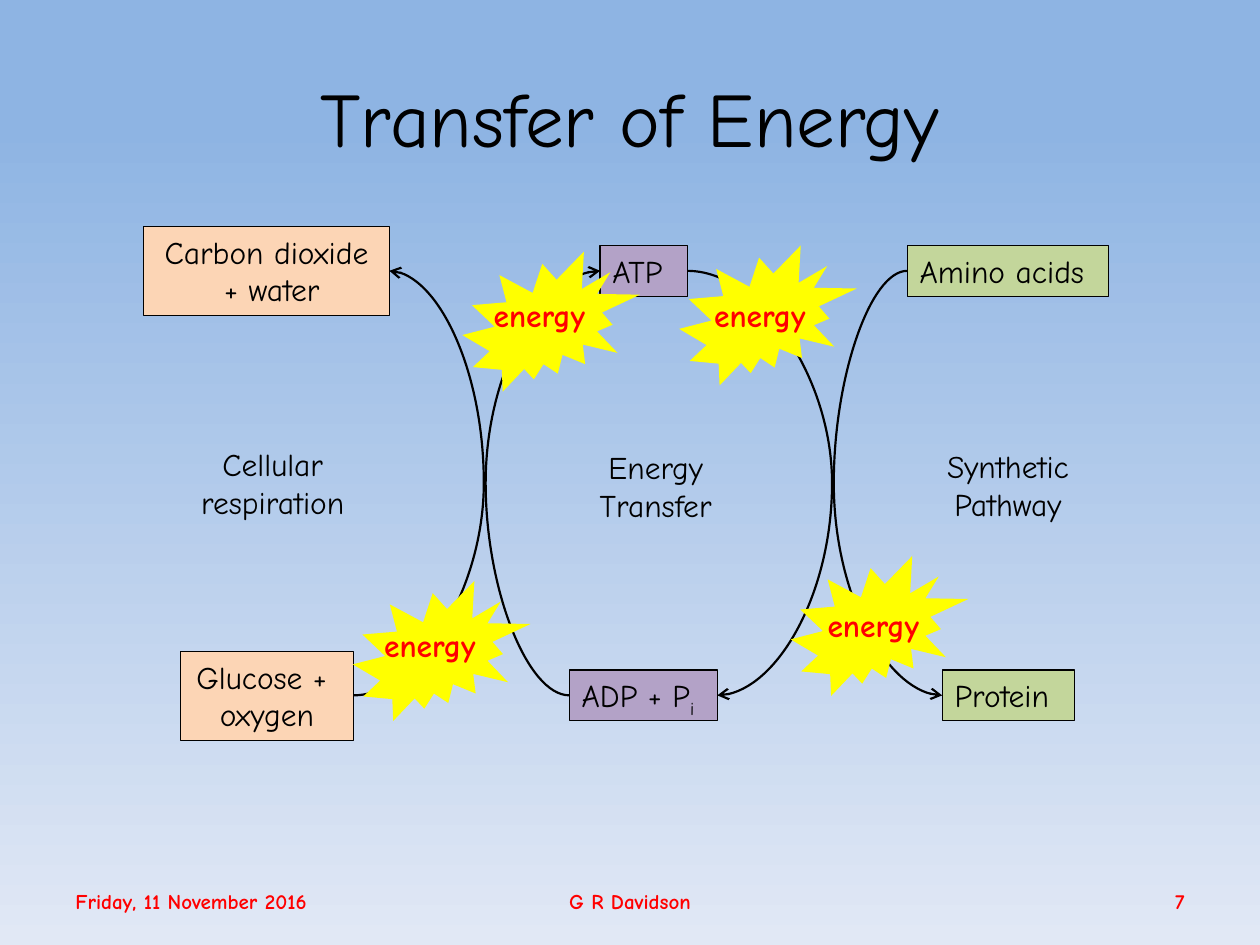
from lxml import etree
from pptx import Presentation
from pptx import util as u
from pptx.dml.color import RGBColor
from pptx.enum import shapes, text
from pptx.oxml import ns

FONT = "Comic Neue"
BLACK = RGBColor(0x00, 0x00, 0x00)
RED = RGBColor(0xFF, 0x00, 0x00)
YELLOW = RGBColor(0xFF, 0xFF, 0x00)
PEACH = RGBColor(0xFC, 0xD5, 0xB5)
PURPLE = RGBColor(0xB3, 0xA2, 0xC7)
GREEN = RGBColor(0xC3, 0xD6, 0x9B)
SKY = RGBColor(0x8E, 0xB4, 0xE3)
MIST = RGBColor(0xE1, 0xE8, 0xF5)

LEFT, CENTER, RIGHT = text.PP_ALIGN.LEFT, text.PP_ALIGN.CENTER, text.PP_ALIGN.RIGHT
TOP_Y, BOTTOM_Y = 154.8, 397.4
SEAL_SIZE = (101.5, 80)
ENERGY_SIZE = (72.7, 28.8)


def points(*values):
    return [u.Pt(value) for value in values]


def paint_background(slide):
    fill = slide.background.fill
    fill.gradient()
    fill.gradient_angle = 270
    for stop, position, color in zip(fill.gradient_stops, (0.13, 1), (SKY, MIST)):
        stop.position = position
        stop.color.rgb = color


def add_run(paragraph, content, size, color, bold):
    run = paragraph.add_run()
    run.text = content
    run.font.name = FONT
    run.font.size = u.Pt(size)
    run.font.color.rgb = color
    run.font.bold = bold
    return run


def write_lines(shape, lines, size=18, color=BLACK, bold=False, align=LEFT):
    frame = shape.text_frame
    frame.word_wrap = False
    frame.vertical_anchor = text.MSO_ANCHOR.TOP
    frame.auto_size = text.MSO_AUTO_SIZE.SHAPE_TO_FIT_TEXT
    for index, line in enumerate(lines):
        paragraph = frame.add_paragraph() if index else frame.paragraphs[0]
        paragraph.alignment = align
        add_run(paragraph, line, size, color, bold)


def add_label(container, box, lines, **style):
    label = container.add_textbox(*points(*box))
    write_lines(label, lines, **style)
    return label


def add_fixed_label(slide, box, content, **style):
    frame = add_label(slide.shapes, box, [content], **style).text_frame
    frame.word_wrap = True
    frame.auto_size = text.MSO_AUTO_SIZE.NONE
    frame.vertical_anchor = text.MSO_ANCHOR.MIDDLE


def add_filled_shape(container, kind, box, color):
    shape = container.add_shape(kind, *points(*box))
    shape.shadow.inherit = False
    shape.fill.solid()
    shape.fill.fore_color.rgb = color
    return shape


def add_substance(slide, box, color, lines, align=LEFT):
    shape = add_filled_shape(slide.shapes, shapes.MSO_SHAPE.RECTANGLE, box, color)
    shape.line.color.rgb = BLACK
    shape.line.width = u.Pt(0.75)
    write_lines(shape, lines, align=align)
    return shape


def add_subscript(shape, content):
    run = add_run(shape.text_frame.paragraphs[0], content, 18, BLACK, False)
    run.font._element.set("baseline", "-25000")


def add_curve(slide, start, end, bow_x):
    connector = slide.shapes.add_connector(
        shapes.MSO_CONNECTOR.CURVE, *points(*start, *end))
    connector.line.color.rgb = BLACK
    connector.line.width = u.Pt(1.25)
    properties = connector._element.spPr
    bend = round((bow_x - start[0]) / (end[0] - start[0]) * 100000)
    guides = properties.find(ns.qn("a:prstGeom")).find(ns.qn("a:avLst"))
    etree.SubElement(guides, ns.qn("a:gd"), name="adj1", fmla=f"val {bend}")
    outline = properties.find(ns.qn("a:ln"))
    etree.SubElement(outline, ns.qn("a:tailEnd"), type="arrow")
    etree.SubElement(properties, ns.qn("a:effectLst"))


def add_energy_burst(slide, seal, label):
    members = slide.shapes.add_group_shape().shapes
    burst = add_filled_shape(
        members, shapes.MSO_SHAPE.EXPLOSION2, (*seal, *SEAL_SIZE), YELLOW)
    burst.line.fill.background()
    add_label(members, (*label, *ENERGY_SIZE), ["energy"], color=RED, bold=True)


def main():
    presentation = Presentation()
    presentation.slide_width, presentation.slide_height = points(720, 540)
    slide = presentation.slides.add_slide(presentation.slide_layouts[6])
    paint_background(slide)

    add_fixed_label(slide, (36, 21.6, 648, 90), "Transfer of Energy",
                    size=44, align=CENTER)
    for left, width, content, align in (
        (36, 239, "Friday, 11 November 2016", LEFT),
        (246, 228, "G R Davidson", CENTER),
        (516, 168, "7", RIGHT),
    ):
        add_fixed_label(slide, (left, 500.5, width, 28.8), content,
                        size=12, color=RED, bold=True, align=align)

    add_substance(slide, (82, 129.4, 140.5, 51), PEACH,
                  ["Carbon dioxide", " + water"], CENTER)
    add_substance(slide, (103, 372.2, 99, 51), PEACH, ["Glucose + ", "oxygen"], CENTER)
    add_substance(slide, (342.9, 140.3, 49.9, 29), PURPLE, ["ATP"])
    phosphate = add_substance(slide, (325.3, 382.8, 84.6, 29), PURPLE, ["ADP + P"])
    add_subscript(phosphate, "i")
    add_substance(slide, (518.4, 140.3, 115, 29), GREEN, ["Amino acids"])
    add_substance(slide, (538.4, 382.8, 75.6, 29), GREEN, ["Protein"])

    add_curve(slide, (202, BOTTOM_Y), (222.5, TOP_Y), 276.5)
    add_curve(slide, (325.3, BOTTOM_Y), (342.9, TOP_Y), 277.5)
    add_curve(slide, (392.8, TOP_Y), (409.9, BOTTOM_Y), 475.5)
    add_curve(slide, (518.4, TOP_Y), (538.4, BOTTOM_Y), 476.5)

    for seal, label in (
        ((201.6, 332), (212.4, 354.3)),
        ((264.2, 143.8), (275, 165.9)),
        ((388.1, 140.3), (401, 165.9)),
        ((451.8, 317.7), (465.8, 342.9)),
    ):
        add_energy_burst(slide, seal, label)

    for box, lines in (
        ((329, 252.7, 91.4, 51), ["Energy", "Transfer"]),
        ((102.2, 250.6, 107.3, 51), ["Cellular", "respiration"]),
        ((527, 252, 98, 51), ["Synthetic", "Pathway"]),
    ):
        add_label(slide.shapes, box, lines, align=CENTER)

    presentation.save("out.pptx")


if __name__ == "__main__":
    main()
